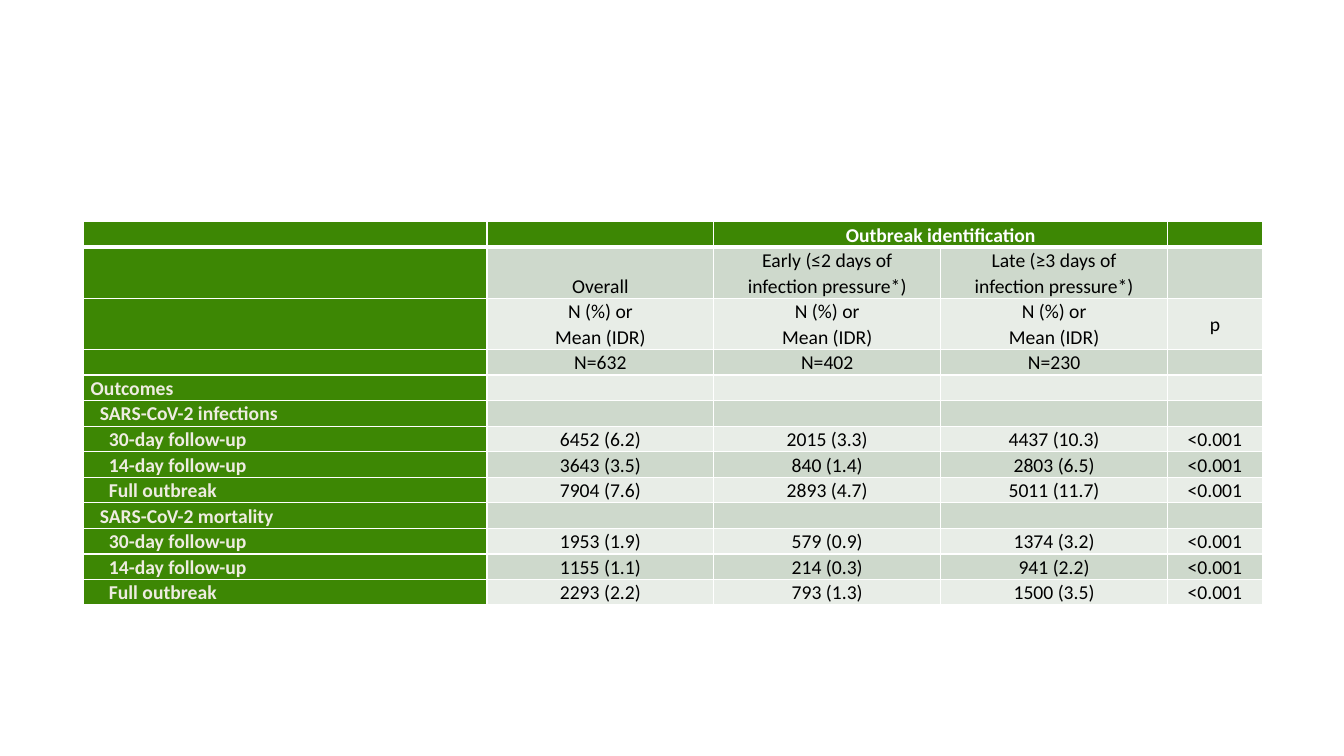
from lxml.etree import SubElement
from pptx import Presentation
from pptx.dml.color import RGBColor
from pptx.enum.text import MSO_ANCHOR as Anchor, PP_ALIGN as Align
from pptx.oxml.ns import qn
from pptx.util import Inches, Pt

# Content: heading rows, then outcome rows as (indent level, label, values)
MEASURE = "N (%) or\nMean (IDR)"
HEADINGS = [
    ("", "", "Outbreak identification", "", ""),
    ("", "Overall", "Early (≤2 days of\ninfection pressure*)",
     "Late (≥3 days of\ninfection pressure*)", ""),
    ("", MEASURE, MEASURE, MEASURE, "p"),
    ("", "N=632", "N=402", "N=230", ""),
]
NO_VALUES = ("", "", "", "")
OUTCOMES = [
    (0, "Outcomes", NO_VALUES),
    (1, "SARS-CoV-2 infections", NO_VALUES),
    (2, "30-day follow-up", ("6452 (6.2)", "2015 (3.3)", "4437 (10.3)", "<0.001")),
    (2, "14-day follow-up", ("3643 (3.5)", "840 (1.4)", "2803 (6.5)", "<0.001")),
    (2, "Full outbreak", ("7904 (7.6)", "2893 (4.7)", "5011 (11.7)", "<0.001")),
    (1, "SARS-CoV-2 mortality", NO_VALUES),
    (2, "30-day follow-up", ("1953 (1.9)", "579 (0.9)", "1374 (3.2)", "<0.001")),
    (2, "14-day follow-up", ("1155 (1.1)", "214 (0.3)", "941 (2.2)", "<0.001")),
    (2, "Full outbreak", ("2293 (2.2)", "793 (1.3)", "1500 (3.5)", "<0.001")),
]

GREEN, BANDS = "3D8704", ("E8EDE7", "CED9CC")
WHITE, CREAM, BLACK = "FFFFFF", "EEECE1", "000000"
COLUMNS = (4, 2.25, 2.25, 2.25, 0.94)
LINE = 0.25
LEVEL_INDENT = 0.09
LEFT, TOP = 0.83, 2.2
P_COLUMN = len(COLUMNS) - 1


def rgb(value):
    return RGBColor.from_string(value)


def set_borders(cell, top=1, bottom=1):
    props = cell._tc.get_or_add_tcPr()
    for side, width in (("L", 1), ("R", 1), ("T", top), ("B", bottom)):
        border = SubElement(props, qn(f"a:ln{side}"), w=str(Pt(width)))
        solid = SubElement(border, qn("a:solidFill"))
        SubElement(solid, qn("a:srgbClr"), val=WHITE)


def write(cell, text, color, bold, align):
    for index, line in enumerate(text.split("\n")):
        frame = cell.text_frame
        paragraph = frame.add_paragraph() if index else frame.paragraphs[0]
        paragraph.alignment = align
        paragraph.line_spacing = 1.07
        if not line:
            # Keeps an empty row as low as a row of text
            SubElement(paragraph._p, qn("a:endParaRPr"), sz="1400")
            continue
        run = paragraph.add_run()
        run.text = line
        run.font.name, run.font.size = "Calibri", Pt(14)
        run.font.bold, run.font.color.rgb = bold, rgb(color)


def main():
    prs = Presentation()
    prs.slide_width, prs.slide_height = Inches(13.33), Inches(7.5)
    slide = prs.slides.add_slide(prs.slide_layouts[6])

    # Grid
    rows = [(0, *row) for row in HEADINGS]
    rows += [(level, label, *values) for level, label, values in OUTCOMES]
    heights = [LINE * (2 if any("\n" in str(t) for t in row) else 1) for row in rows]
    results = slide.shapes.add_table(
        len(rows), len(COLUMNS), Inches(LEFT), Inches(TOP),
        Inches(sum(COLUMNS)), Inches(sum(heights))).table
    results.horz_banding = False
    for column, width in zip(results.columns, COLUMNS):
        column.width = Inches(width)
    for grid_row, height in zip(results.rows, heights):
        grid_row.height = Inches(height)

    # Cells
    for r, (level, *texts) in enumerate(rows):
        outcome = r >= len(HEADINGS)
        for c, text in enumerate(texts):
            cell = results.cell(r, c)
            label = c == 0
            green = label or r == 0
            inset = 0.07 if outcome else 0.05
            cell.margin_left = Inches(inset + (LEVEL_INDENT * level if label else 0))
            cell.margin_right = Inches(inset)
            cell.margin_top = cell.margin_bottom = 0
            if label or not outcome and c != P_COLUMN:
                cell.vertical_anchor = Anchor.BOTTOM
            elif outcome and c == P_COLUMN:
                cell.vertical_anchor = Anchor.TOP
            else:
                cell.vertical_anchor = Anchor.MIDDLE
            set_borders(cell, top=3 if r == 1 else 1, bottom=3 if r == 0 else 1)
            cell.fill.solid()
            cell.fill.fore_color.rgb = rgb(GREEN if green else BANDS[r % 2])
            color = WHITE if r == 0 else CREAM if label else BLACK
            write(cell, text, color, green, Align.LEFT if label else Align.CENTER)

    # Heading over the early and late columns
    results.cell(0, 2).merge(results.cell(0, 3))
    prs.save("out.pptx")


if __name__ == "__main__":
    main()
